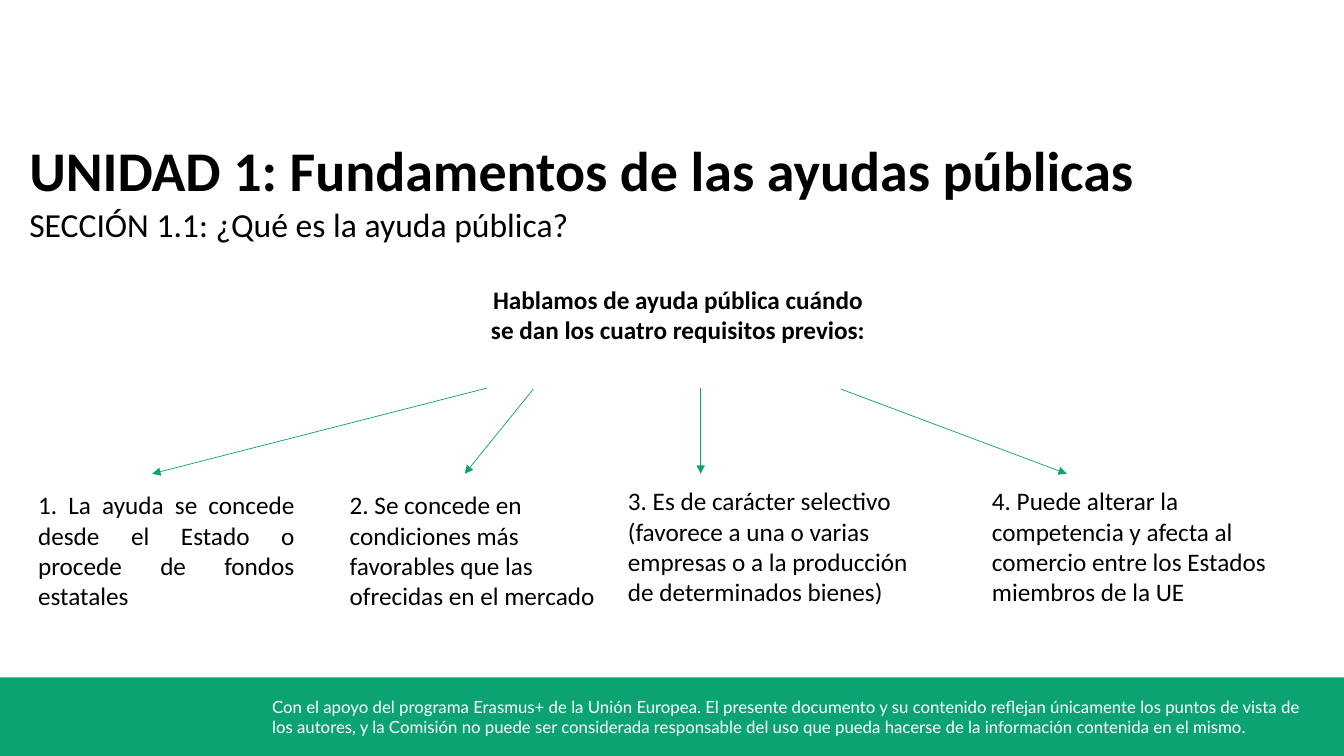
from dataclasses import dataclass

from lxml import etree
from pptx import Presentation, util as u
from pptx.dml.color import RGBColor
from pptx.enum import shapes, text
from pptx.oxml import ns

GREEN, BLACK, WHITE = "0CA373", "000000", "FFFFFF"
LEFT, CENTER, JUSTIFY = (
    text.PP_ALIGN.LEFT, text.PP_ALIGN.CENTER, text.PP_ALIGN.JUSTIFY)


@dataclass
class Line:
    words: str
    size: float = 18
    bold: bool = False
    align: text.PP_ALIGN = LEFT
    font: str = "Calibri"
    color: str = BLACK
    before: float = 0


@dataclass
class Requirement:
    words: str
    left: float
    top: float
    width: float
    height: float
    arrow_from: tuple[float, float]
    arrow_to: tuple[float, float]
    align: text.PP_ALIGN = LEFT


def rgb(color: str) -> RGBColor:
    return RGBColor.from_string(color)


def place(sp, left: float, top: float, width: float, height: float) -> None:
    sp.left, sp.top = u.Inches(left), u.Inches(top)
    sp.width, sp.height = u.Inches(width), u.Inches(height)


def write(sp, lines: list[Line]) -> None:
    tf = sp.text_frame
    tf.word_wrap = True
    tf.auto_size = text.MSO_AUTO_SIZE.NONE
    tf.vertical_anchor = text.MSO_ANCHOR.TOP
    for i, line in enumerate(lines):
        p = tf.add_paragraph() if i else tf.paragraphs[0]
        p.alignment = line.align
        p.space_before = u.Pt(line.before)
        pPr = p._p.get_or_add_pPr()
        pPr.set("marL", "0")
        pPr.set("indent", "0")
        etree.SubElement(pPr, ns.qn("a:buNone"))
        r = p.add_run()
        r.text = line.words
        r.font.name = line.font
        r.font.size = u.Pt(line.size)
        r.font.bold = line.bold
        r.font.color.rgb = rgb(line.color)


def add_text(s, left: float, top: float, width: float, height: float,
             line: Line) -> None:
    sp = s.shapes.add_textbox(
        u.Inches(left), u.Inches(top), u.Inches(width), u.Inches(height))
    write(sp, [line])


def add_arrow(s, start: tuple[float, float], end: tuple[float, float]) -> None:
    arrow = s.shapes.add_connector(
        shapes.MSO_CONNECTOR.STRAIGHT, *map(u.Inches, start + end))
    arrow.line.color.rgb = rgb(GREEN)
    arrow.line.width = u.Pt(0.5)
    etree.SubElement(
        arrow.line._get_or_add_ln(), ns.qn("a:tailEnd"), type="triangle")
    etree.SubElement(arrow._element.spPr, ns.qn("a:effectLst"))


REQUIREMENTS = [
    Requirement("1. La ayuda se concede desde el Estado o procede de fondos "
                "estatales", 0.28, 4.81, 2.74, 1.31,
                (4.83, 3.85), (1.51, 4.7), JUSTIFY),
    Requirement("2. Se concede en condiciones más favorables que las "
                "ofrecidas en el mercado", 3.37, 4.81, 2.83, 1.31,
                (5.29, 3.86), (4.61, 4.7)),
    Requirement("3. Es de carácter selectivo (favorece a una o varias "
                "empresas o a la producción de determinados bienes)",
                6.13, 4.77, 3.16, 1.31, (6.95, 3.85), (6.95, 4.7)),
    Requirement("4. Puede alterar la competencia y afecta al comercio entre "
                "los Estados miembros de la UE", 9.74, 4.77, 3.16, 1.31,
                (8.34, 3.86), (10.58, 4.7)),
]


def main() -> None:
    prs = Presentation()
    prs.slide_width, prs.slide_height = u.Inches(13.33), u.Inches(7.5)
    s = prs.slides.add_slide(prs.slide_layouts[1])
    title, body = s.placeholders

    # Footer band
    band = s.shapes.add_shape(
        shapes.MSO_SHAPE.RECTANGLE, 0, u.Inches(6.72),
        prs.slide_width, u.Inches(0.78))
    band.shadow.inherit = False
    band.fill.solid()
    band.fill.fore_color.rgb = rgb(GREEN)
    band.line.fill.background()
    add_text(s, 2.6, 6.86, 10.42, 0.5, Line(
        "Con el apoyo del programa Erasmus+ de la Unión Europea. El presente "
        "documento y su contenido reflejan únicamente los puntos de vista de "
        "los autores, y la Comisión no puede ser considerada responsable del "
        "uso que pueda hacerse de la información contenida en el mismo.",
        size=12, font="Lato", color=WHITE))

    # Unit and section
    place(title, 0.19, 1.29, 11.83, 1.19)
    write(title, [
        Line("UNIDAD 1: Fundamentos de las ayudas públicas", 40, True),
        Line("SECCIÓN 1.1: ¿Qué es la ayuda pública?", 24, before=1.1)])

    # Premise
    place(body, 0.19, 2.77, 13.07, 0.75)
    write(body, [
        Line("Hablamos de ayuda pública cuándo", bold=True, align=CENTER),
        Line("se dan los cuatro requisitos previos:", bold=True,
             align=CENTER)])

    # The four requirements and their arrows
    for req in REQUIREMENTS:
        add_text(s, req.left, req.top, req.width, req.height,
                 Line(req.words, align=req.align))
        add_arrow(s, req.arrow_from, req.arrow_to)

    prs.save("out.pptx")


if __name__ == "__main__":
    main()
